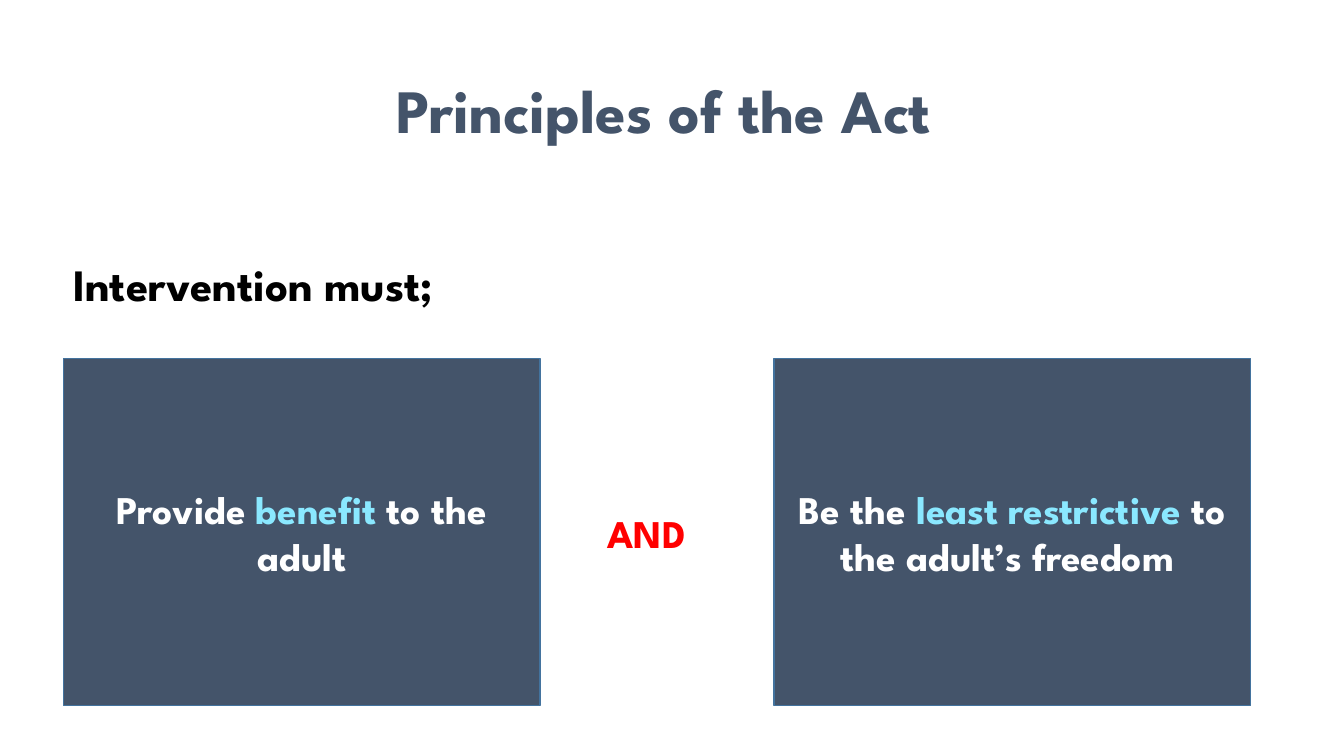
"""Build the "Principles of the Act" slide."""
from dataclasses import dataclass

from pptx import Presentation
from pptx.dml.color import RGBColor
from pptx.enum.shapes import MSO_SHAPE as Shape
from pptx.enum.text import MSO_ANCHOR as Anchor, MSO_AUTO_SIZE as AutoSize, PP_ALIGN as Align
from pptx.util import Cm, Pt

FONT = "League Spartan"
COLORS = {
    "slate": "44546A",
    "outline": "43739E",
    "highlight": "8AE8FF",
    "white": "FFFFFF",
    "black": "000000",
    "red": "FF0000",
}
Spans = list[tuple[str, str]]


@dataclass(frozen=True)
class Area:
    """Position and size in centimetres."""

    left: float
    top: float
    width: float
    height: float

    def lengths(self) -> tuple[Cm, Cm, Cm, Cm]:
        """Return the four values as lengths."""
        return Cm(self.left), Cm(self.top), Cm(self.width), Cm(self.height)


@dataclass(frozen=True)
class Label:
    """A text box without fill or line."""

    area: Area
    text: str
    color: str
    size: int
    centered: bool = False


@dataclass(frozen=True)
class Card:
    """A filled rectangle stating one principle."""

    left: float
    spans: Spans


CARD_TOP, CARD_WIDTH, CARD_HEIGHT = 9.04, 12.01, 8.74

LABELS = [
    Label(Area(2.34, 1.02, 29.21, 3.68), "Principles of the Act ", "slate", 44, centered=True),
    Label(Area(1.6, 6.35, 10.62, 1.63), "Intervention must;", "black", 32),
    Label(Area(15.06, 12.7, 3.02, 1.45), "AND", "red", 28),
]
CARDS = [
    Card(1.6, [("Provide ", "white"), ("benefit", "highlight"), (" to the adult", "white")]),
    Card(19.51, [("Be the ", "white"), ("least restrictive ", "highlight"),
                 ("to the adult’s freedom ", "white")]),
]


def color(name: str) -> RGBColor:
    """Look up a named colour."""
    return RGBColor.from_string(COLORS[name])


def write(box, spans: Spans, *, size: int, centered: bool = False, spacing: float = 1.0) -> None:
    """Fill a shape with one paragraph of bold coloured spans."""
    frame = box.text_frame
    frame.word_wrap = centered
    frame.auto_size = AutoSize.NONE if centered else AutoSize.SHAPE_TO_FIT_TEXT
    frame.vertical_anchor = Anchor.MIDDLE if centered else Anchor.TOP
    para = frame.paragraphs[0]
    para.alignment = Align.CENTER if centered else Align.LEFT
    para.line_spacing = spacing
    for text, color_name in spans:
        span = para.add_run()
        span.text = text
        span.font.name = FONT
        span.font.size = Pt(size)
        span.font.bold = True
        span.font.color.rgb = color(color_name)


def draw_label(page, label: Label) -> None:
    """Draw a plain text label."""
    box = page.shapes.add_textbox(*label.area.lengths())
    write(box, [(label.text, label.color)], size=label.size, centered=label.centered,
          spacing=0.9 if label.centered else 1.0)


def draw_card(page, card: Card) -> None:
    """Draw a principle card."""
    area = Area(card.left, CARD_TOP, CARD_WIDTH, CARD_HEIGHT)
    box = page.shapes.add_shape(Shape.RECTANGLE, *area.lengths())
    box.shadow.inherit = False
    box.fill.solid()
    box.fill.fore_color.rgb = color("slate")
    box.line.color.rgb = color("outline")
    box.line.width = Pt(1)
    write(box, card.spans, size=28, centered=True)


def main() -> None:
    """Create the deck and save it."""
    deck = Presentation()
    deck.slide_width, deck.slide_height = Cm(33.87), Cm(19.05)
    page = deck.slides.add_slide(deck.slide_layouts[6])
    for label in LABELS:
        draw_label(page, label)
    for card in CARDS:
        draw_card(page, card)
    deck.save("out.pptx")


if __name__ == "__main__":
    main()
